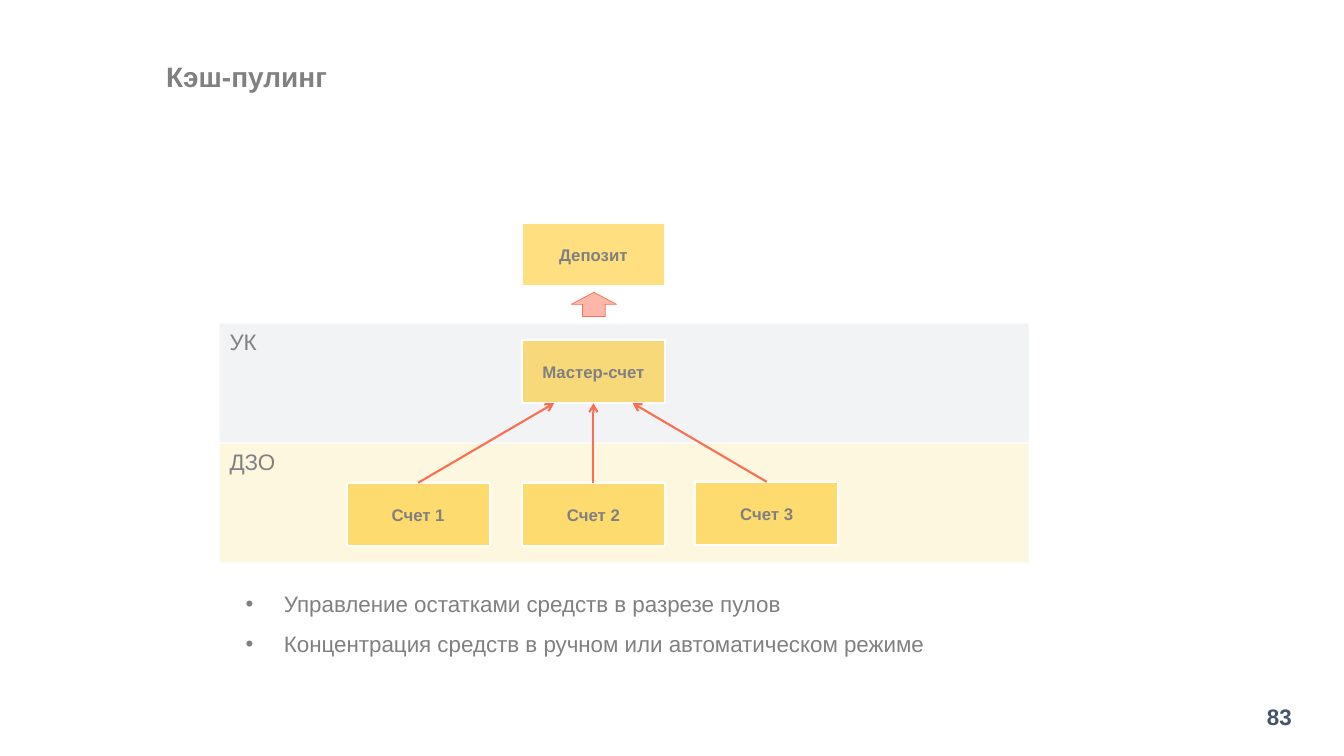
import pptx
import pptx.dml.color
import pptx.enum.shapes
import pptx.enum.text
import pptx.oxml.ns
import pptx.util
from lxml import etree

Inches, Pt = pptx.util.Inches, pptx.util.Pt
SHAPES = pptx.enum.shapes.MSO_SHAPE
ALIGN = pptx.enum.text.PP_ALIGN
ANCHOR = pptx.enum.text.MSO_ANCHOR
qn = pptx.oxml.ns.qn

# Content
TITLE = "Кэш-пулинг"
PAGE_NUMBER = "83"
BANDS = [("ДЗО", 4.4, "subsidiary_band"), ("УК", 3.21, "company_band")]
DEPOSIT = ("Депозит", 5.18, 2.21)
MASTER = ("Мастер-счет", 5.18, 3.37)
ACCOUNTS = [("Счет 1", 3.44, 4.79), ("Счет 2", 5.18, 4.79), ("Счет 3", 6.9, 4.78)]
BULLETS = [
    "Управление остатками средств в разрезе пулов",
    "Концентрация средств в ручном или автоматическом режиме",
]

THEME = {
    "font": "Arial", "text": "808080", "page": "44546A",
    "subsidiary_band": "F9E383", "company_band": "CCD1D9",
    "box": "FFC000", "box_line": "FFFFFF", "arrow": "FC6E51",
    "title_size": 20, "body_size": 16, "box_size": 12,
}
BOX_WIDTH, BOX_HEIGHT = 1.42, 0.63
ARROW_SPREAD = 0.39

presentation = pptx.Presentation()
presentation.slide_width, presentation.slide_height = Inches(13.34), Inches(7.5)
slide = presentation.slides.add_slide(presentation.slide_layouts[6])


def color(name):
    return pptx.dml.color.RGBColor.from_string(THEME[name])


def write(shape, lines, size, bold=False, align=ALIGN.LEFT, anchor=ANCHOR.TOP, ink="text"):
    frame = shape.text_frame
    frame.word_wrap = True
    frame.vertical_anchor = anchor
    frame.text = "\n".join(lines)
    for paragraph in frame.paragraphs:
        paragraph.alignment = align
        for run in paragraph.runs:
            run.font.name = THEME["font"]
            run.font.size = Pt(THEME[size])
            run.font.bold = bold
            run.font.color.rgb = color(ink)
    return frame.paragraphs


def add_text(left, top, width, height, lines, size, **style):
    box = slide.shapes.add_textbox(Inches(left), Inches(top), Inches(width), Inches(height))
    return write(box, lines, size, **style)


def add_shape(kind, left, top, width, height, fill, opacity, line=None, line_width=0):
    shape = slide.shapes.add_shape(kind, Inches(left), Inches(top), Inches(width), Inches(height))
    shape.shadow.inherit = False
    shape.fill.solid()
    shape.fill.fore_color.rgb = color(fill)
    fill_color = shape.fill._xPr.find(qn("a:solidFill"))[0]
    etree.SubElement(fill_color, qn("a:alpha"), val=str(opacity * 1000))
    if line:
        shape.line.color.rgb = color(line)
        shape.line.width = Pt(line_width)
    else:
        shape.line.fill.background()
    return shape


def add_box(label, left, top):
    box = add_shape(SHAPES.RECTANGLE, left, top, BOX_WIDTH, BOX_HEIGHT, "box", 50, "box_line", 1.5)
    write(box, [label], "box_size", bold=True, align=ALIGN.CENTER, anchor=ANCHOR.MIDDLE)
    return box


# Page number and title
number = add_text(11.92, 6.9, 1, 0.39, [PAGE_NUMBER], "body_size",
                  bold=True, align=ALIGN.RIGHT, ink="page")
number[0].line_spacing = 1.1
title = add_text(1.55, 0.05, 10.87, 1.45, [TITLE], "title_size", bold=True, anchor=ANCHOR.MIDDLE)
title[0].line_spacing = 0.9

# Level bands
for label, top, fill in BANDS:
    band = add_shape(SHAPES.RECTANGLE, 2.18, top, 8.03, 1.18, fill, 25)
    write(band, [label], "body_size")

# Account boxes
add_box(*DEPOSIT)
master_box = add_box(*MASTER)
account_boxes = [add_box(*account) for account in ACCOUNTS]

# Arrows from the accounts to the master account
master_center = MASTER[1] + BOX_WIDTH / 2
master_bottom = MASTER[2] + BOX_HEIGHT
for side, box in zip((-1, 0, 1), account_boxes):
    arrow = slide.shapes.add_connector(
        pptx.enum.shapes.MSO_CONNECTOR.STRAIGHT, box.left + box.width // 2, box.top,
        Inches(master_center + side * ARROW_SPREAD), Inches(master_bottom))
    arrow.begin_connect(box, 0)
    if side == 0:
        arrow.end_connect(master_box, 2)
    arrow.line.color.rgb = color("arrow")
    arrow.line.width = Pt(1.5)
    etree.SubElement(arrow.line._get_or_add_ln(), qn("a:tailEnd"), type="arrow")
    etree.SubElement(arrow._element.spPr, qn("a:effectLst"))

# Block arrow up to the deposit
add_shape(SHAPES.UP_ARROW, 5.67, 2.9, 0.45, 0.24, "arrow", 50, "arrow", 0.5)

# Bullets
for index, paragraph in enumerate(add_text(2.34, 5.81, 7.88, 0.77, BULLETS, "body_size")):
    properties = paragraph._p.get_or_add_pPr()
    properties.set("marL", str(Inches(0.38)))
    properties.set("indent", str(-Inches(0.38)))
    etree.SubElement(properties, qn("a:buFont"), typeface=THEME["font"])
    etree.SubElement(properties, qn("a:buChar"), char="•")
    if index:
        paragraph.space_before = Pt(9)

presentation.save("out.pptx")
